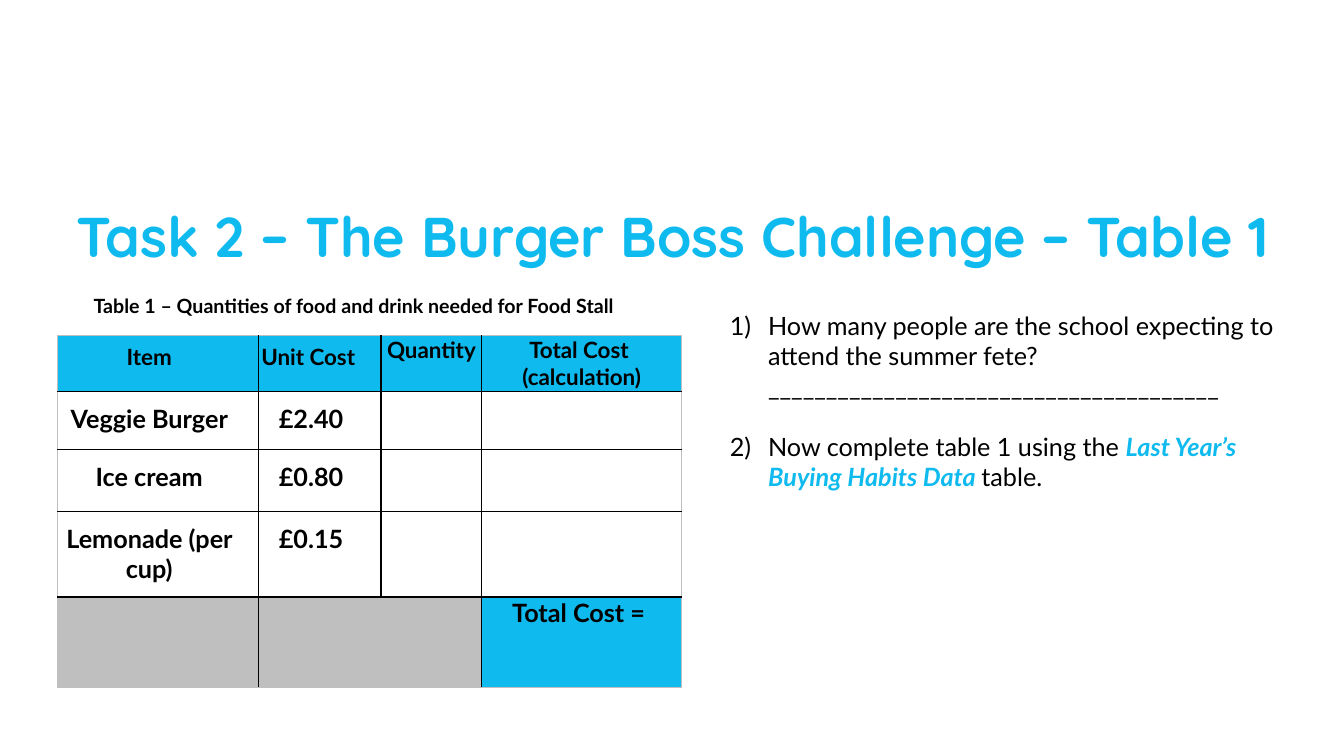
"""Build the Burger Boss Challenge worksheet slide with its cost table."""
from lxml import etree
from pptx import Presentation
from pptx.dml.color import RGBColor
from pptx.enum.text import MSO_ANCHOR, PP_ALIGN
from pptx.oxml.ns import qn
from pptx.util import Inches, Pt

CENTER, LEFT = PP_ALIGN.CENTER, PP_ALIGN.LEFT
TOP, MIDDLE = MSO_ANCHOR.TOP, MSO_ANCHOR.MIDDLE

BLUE, GREY, BLACK, WHITE = "0FBAEF", "BFBFBF", "000000", "FFFFFF"
BODY_FONT, TITLE_FONT = "Lato", "Quicksand"

TITLE = "Task 2 – The Burger Boss Challenge – Table 1"
CAPTION = "Table 1 – Quantities of food and drink needed for Food Stall"
QUESTIONS = [
    [("How many people are the school expecting to attend the summer fete? "
      "_______________________________________", False)],
    [("Now complete table 1 using the ", False),
     ("Last Year’s Buying Habits Data ", True),
     ("table.", False)],
]
COST_ROWS = [
    ["Item", "Unit Cost ", "Quantity", "Total Cost \n(calculation)"],
    ["Veggie Burger", "£2.40", "", ""],
    ["Ice cream", "£0.80", "", ""],
    ["Lemonade (per cup)", "£0.15", "", ""],
    ["", "", "", "Total Cost = "],
]
COLUMN_WIDTHS = [1.99, 1.22, 1, 1.98]
ROW_HEIGHTS = [0.55, 0.58, 0.61, 0.85, 0.9]
LAST_ROW, LAST_COLUMN = len(ROW_HEIGHTS) - 1, len(COLUMN_WIDTHS) - 1


def color(hex_value):
    return RGBColor.from_string(hex_value)


def add_span(para, text, size, hex_value=BLACK, bold=False, italic=False,
             font=BODY_FONT):
    span = para.add_run()
    span.text = text
    span.font.name, span.font.size = font, Pt(size)
    span.font.bold, span.font.italic = bold, italic
    span.font.color.rgb = color(hex_value)


def add_box(page, left, top, width, height, anchor=TOP):
    box = page.shapes.add_textbox(*map(Inches, (left, top, width, height)))
    box.text_frame.word_wrap = True
    box.text_frame.vertical_anchor = anchor
    return box.text_frame


def number_para(para):
    properties = para._p.get_or_add_pPr()
    properties.set("marL", str(Inches(0.38)))
    properties.set("indent", str(-Inches(0.38)))
    bullet = etree.SubElement(properties, qn("a:buAutoNum"))
    bullet.set("type", "arabicParenR")


def add_questions(page):
    frame = add_box(page, 7.14, 3.03, 5.65, 1.92)
    for index, pieces in enumerate(QUESTIONS):
        para = frame.add_paragraph() if index else frame.paragraphs[0]
        number_para(para)
        if index:
            para.space_before = Pt(21.6)
        for text, strong in pieces:
            add_span(para, text, 18, BLUE if strong else BLACK, strong, strong)


def cell_color(row, column):
    if row == LAST_ROW:
        return BLUE if column == LAST_COLUMN else GREY
    return WHITE if row else BLUE


def cell_insets(row, column):
    if column > 1:
        return 0.01, 0.01, 0.01, 0.01
    vertical = 0.12 if row else 0.08
    return 0, vertical, 0.17, vertical


def add_borders(cell, row, column):
    properties = cell._tc.get_or_add_tcPr()
    outer_edges = {"lnL": column == 0, "lnR": column == LAST_COLUMN,
                   "lnT": row == 0, "lnB": row == LAST_ROW}
    for index, (tag, outer) in enumerate(outer_edges.items()):
        line = etree.Element(qn("a:" + tag), w=str(Pt(0.5 if outer else 1)))
        fill = etree.SubElement(line, qn("a:solidFill"))
        etree.SubElement(fill, qn("a:srgbClr"), val=GREY if outer else BLACK)
        properties.insert(index, line)


def fill_cell(cell, text, row, column):
    cell.fill.solid()
    cell.fill.fore_color.rgb = color(cell_color(row, column))
    insets = map(Inches, cell_insets(row, column))
    cell.margin_left, cell.margin_top, cell.margin_right, cell.margin_bottom = insets
    add_borders(cell, row, column)
    for index, line in enumerate(text.split("\n") if text else []):
        frame = cell.text_frame
        para = frame.add_paragraph() if index else frame.paragraphs[0]
        para.alignment = CENTER
        add_span(para, line, 18 if row else 16, bold=True)


def add_cost_table(page):
    size = Inches(sum(COLUMN_WIDTHS)), Inches(sum(ROW_HEIGHTS))
    table = page.shapes.add_table(len(ROW_HEIGHTS), len(COLUMN_WIDTHS),
                                  Inches(0.57), Inches(3.33), *size).table
    table.first_row = table.horz_banding = False
    for column, width in zip(table.columns, COLUMN_WIDTHS):
        column.width = Inches(width)
    for row, height in zip(table.rows, ROW_HEIGHTS):
        row.height = Inches(height)
    for row, texts in enumerate(COST_ROWS):
        for column, text in enumerate(texts):
            fill_cell(table.cell(row, column), text, row, column)
    table.cell(LAST_ROW, 1).merge(table.cell(LAST_ROW, 2))


def main():
    deck = Presentation()
    deck.slide_width, deck.slide_height = Inches(13.33), Inches(7.5)
    page = deck.slides.add_slide(deck.slide_layouts[6])

    title = add_box(page, 0.41, 2.05, 12.52, 0.65, MIDDLE).paragraphs[0]
    title.alignment, title.line_spacing = CENTER, 0.9
    add_span(title, TITLE, 40, BLUE, True, font=TITLE_FONT)

    add_questions(page)
    add_cost_table(page)

    caption = add_box(page, 0.83, 2.86, 5.94, 0.34, MIDDLE).paragraphs[0]
    caption.alignment = LEFT
    add_span(caption, CAPTION, 14, bold=True)
    deck.save("out.pptx")


if __name__ == "__main__":
    main()
